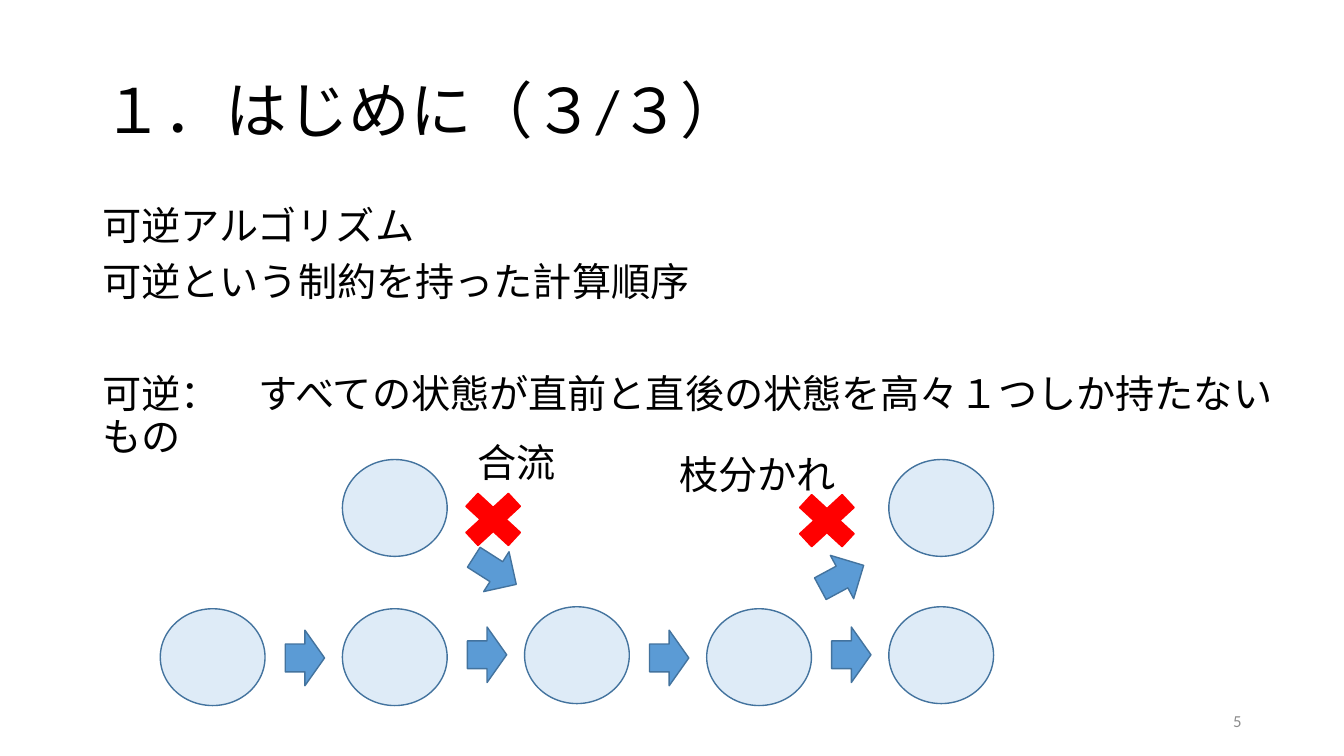
import pptx
import pptx.dml.color
import pptx.enum.shapes
import pptx.enum.text
import pptx.util

Cm = pptx.util.Cm
Pt = pptx.util.Pt
SHAPE = pptx.enum.shapes.MSO_SHAPE
ALIGN = pptx.enum.text.PP_ALIGN
ANCHOR = pptx.enum.text.MSO_ANCHOR

BLACK = pptx.dml.color.RGBColor(0x00, 0x00, 0x00)
GREY = pptx.dml.color.RGBColor(0x8C, 0x8C, 0x8C)
PALE_BLUE = pptx.dml.color.RGBColor(0xDE, 0xEB, 0xF7)
BLUE = pptx.dml.color.RGBColor(0x5B, 0x9B, 0xD5)
DARK_BLUE = pptx.dml.color.RGBColor(0x43, 0x73, 0x9E)
RED = pptx.dml.color.RGBColor(0xFF, 0x00, 0x00)

STATE_SIZE = (2.64, 2.44)
STEP_SIZE = (0.99, 1.4)
CROSS_SIZE = (2.06, 1.9)
STATE_PITCH = 4.59
STEP_OFFSET = 3.15
STATE_TOPS = (4.42, 4.42, 4.37, 4.42, 4.37)
STEP_TOPS = (4.96, 4.88, 4.96, 4.88)
UPPER_COLUMNS = (1, 4)
UPPER_TOP = 0.66


def apply_format(target, values):
    for attribute, value in values.items():
        setattr(target, attribute, value)


def add_text(slide, box, lines, size, color=BLACK, frame_format=None,
             paragraph_format=None):
    """Write one paragraph for each (text, points before) pair."""
    frame = slide.shapes.add_textbox(*map(Cm, box)).text_frame
    apply_format(frame, {"word_wrap": True, **(frame_format or {})})
    for index, (text, before) in enumerate(lines):
        paragraph = frame.add_paragraph() if index else frame.paragraphs[0]
        apply_format(paragraph, {"space_before": Pt(before),
                                 **(paragraph_format or {})})
        run = paragraph.add_run()
        run.text = text
        apply_format(run.font, {"name": "Calibri", "size": Pt(size)})
        run.font.color.rgb = color


def add_figure(slide, kind, box, fill, outline, rotation=0):
    figure = slide.shapes.add_shape(kind, *map(Cm, box))
    figure.shadow.inherit = False
    figure.rotation = rotation
    figure.fill.solid()
    figure.fill.fore_color.rgb = fill
    figure.line.color.rgb = outline
    figure.line.width = Pt(1)


def add_title(slide, box):
    add_text(slide, box, [("１．はじめに（３/３）", 0)], 44,
             frame_format={"vertical_anchor": ANCHOR.MIDDLE},
             paragraph_format={"line_spacing": 0.9})


def add_definition(slide, box):
    lines = [
        ("可逆アルゴリズム", 10),
        ("可逆という制約を持った計算順序", 10),
        ("可逆：　すべての状態が直前と直後の状態を高々１つしか持たないもの", 50),
    ]
    add_text(slide, box, lines, 28, paragraph_format={"line_spacing": 0.9})


def add_state_diagram(slide, left, top):
    """Draw a chain of states with a forbidden merge and a forbidden branch."""
    states = [(column, drop) for column, drop in enumerate(STATE_TOPS)]
    states += [(column, UPPER_TOP) for column in UPPER_COLUMNS]
    for column, drop in states:
        box = (left + column * STATE_PITCH, top + drop, *STATE_SIZE)
        add_figure(slide, SHAPE.OVAL, box, PALE_BLUE, DARK_BLUE)

    steps = [(STEP_OFFSET + column * STATE_PITCH, drop, *STEP_SIZE, 0)
             for column, drop in enumerate(STEP_TOPS)]
    merge = (7.8, 2.87, 1.27, 1.19, 32.5)
    branch = (16.56, 3.0, 1.24, 1.24, 331.7)
    for x, y, width, height, rotation in [*steps, merge, branch]:
        add_figure(slide, SHAPE.RIGHT_ARROW, (left + x, top + y, width, height),
                   BLUE, DARK_BLUE, rotation)

    for text, x, y, width in [("合流", 7.75, 0, 2.84),
                              ("枝分かれ", 12.83, 0.31, 5.05)]:
        add_text(slide, (left + x, top + y, width, 1.45), [(text, 0)], 28)

    for x, y in [(7.36, 1.22), (15.77, 1.25)]:
        add_figure(slide, SHAPE.MATH_MULTIPLY, (left + x, top + y, *CROSS_SIZE),
                   RED, RED)


def add_page_number(slide, box):
    add_text(slide, box, [("5", 0)], 12, GREY,
             {"vertical_anchor": ANCHOR.MIDDLE}, {"alignment": ALIGN.RIGHT})


def main():
    deck = pptx.Presentation()
    apply_format(deck, {"slide_width": Cm(33.87), "slide_height": Cm(19.05)})
    slide = deck.slides.add_slide(deck.slide_layouts[6])
    add_title(slide, (2.33, 1.01, 29.21, 3.68))
    add_definition(slide, (2.33, 5.07, 30.13, 6.58))
    add_state_diagram(slide, 4.04, 10.92)
    add_page_number(slide, (23.92, 17.66, 7.62, 1.01))
    deck.save("out.pptx")


if __name__ == "__main__":
    main()
